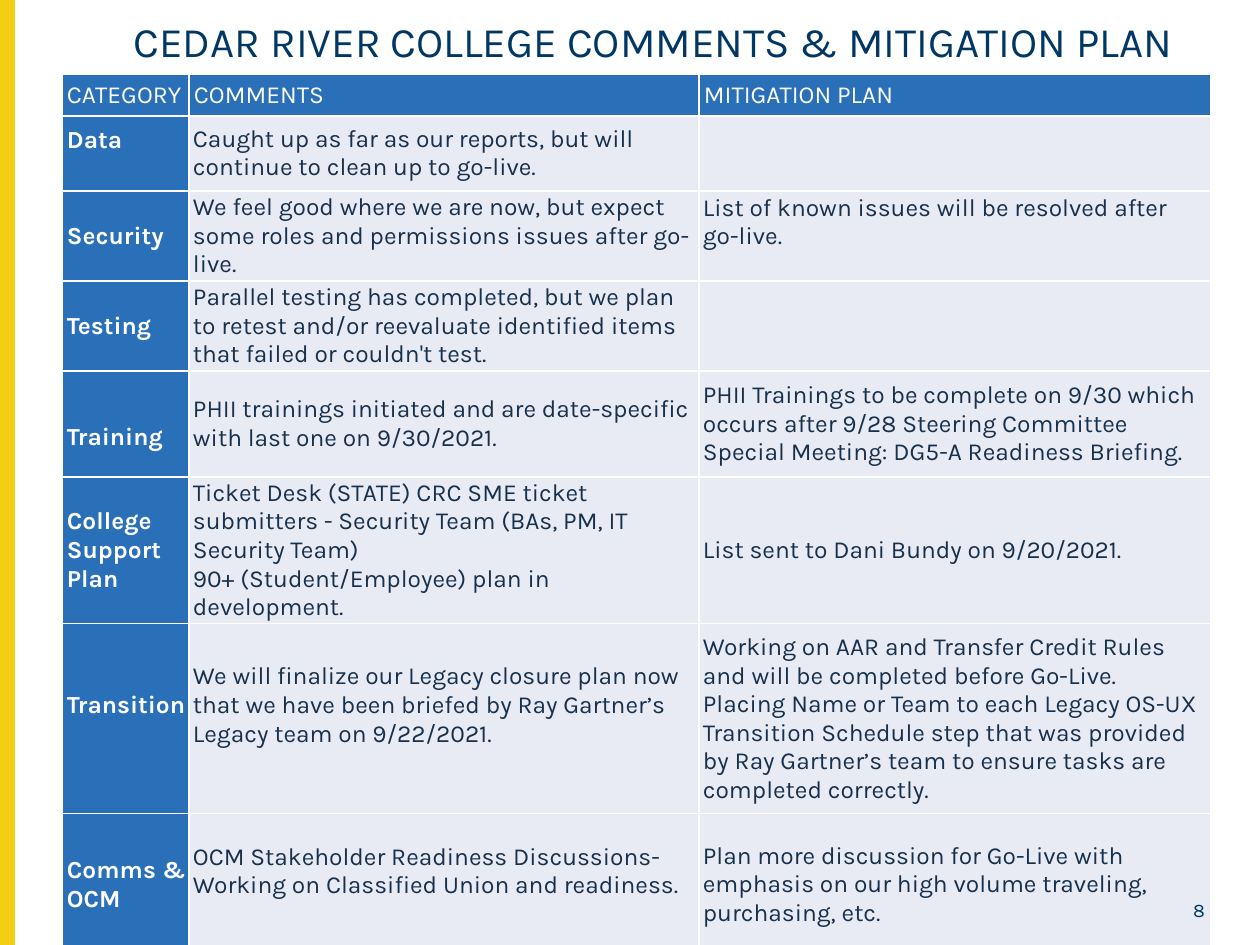
from pptx import Presentation
from pptx.dml.color import RGBColor
from pptx.enum.shapes import MSO_SHAPE
from pptx.enum.text import MSO_ANCHOR, PP_ALIGN
from pptx.util import Pt

PX = 914400 // 126
WHITE, NAVY, INK = "FFFFFF", "003764", "17304C"
BLUE, PALE, YELLOW = "2A70B8", "E8EBF3", "F4CE12"


def color(value):
    return RGBColor.from_string(value)


def format_text(text_frame, size, text_color, bold=False, **paragraph_format):
    text_frame.word_wrap = True
    text_frame.vertical_anchor = MSO_ANCHOR.MIDDLE
    for paragraph in text_frame.paragraphs:
        for name, value in paragraph_format.items():
            setattr(paragraph, name, value)
        for run in paragraph.runs:
            font = run.font
            font.name, font.size, font.bold = "Karla", Pt(size), bold
            font.color.rgb = color(text_color)


presentation = Presentation()
presentation.slide_width, presentation.slide_height = 1260 * PX, 945 * PX
slide = presentation.slides.add_slide(presentation.slide_layouts[5])

# Side bar
bar = slide.shapes.add_shape(MSO_SHAPE.RECTANGLE, 0, 0, 14 * PX, 945 * PX)
bar.shadow.inherit = False
bar.fill.solid()
bar.fill.fore_color.rgb = bar.line.color.rgb = color(YELLOW)
bar.line.width = Pt(1)

# Title
title = slide.shapes.title
title.left, title.top, title.width, title.height = 62 * PX, 14 * PX, 1182 * PX, 60 * PX
title.text_frame.text = "CEDAR RIVER COLLEGE COMMENTS & MITIGATION PLAN"
format_text(title.text_frame, 24, NAVY, alignment=PP_ALIGN.CENTER, line_spacing=0.9)

# Comments table
rows = [
    ("CATEGORY", "COMMENTS", "MITIGATION PLAN"),
    ("Data", "Caught up as far as our reports, but will continue to clean up to go-live.", ""),
    ("Security",
     "We feel good where we are now, but expect some roles and permissions issues after go-live.",
     "List of known issues will be resolved after go-live."),
    ("Testing",
     "Parallel testing has completed, but we plan to retest and/or reevaluate identified items "
     "that failed or couldn't test.", ""),
    ("Training",
     "PHII trainings initiated and are date-specific with last one on 9/30/2021.",
     "PHII Trainings to be complete on 9/30 which occurs after 9/28 Steering Committee "
     "Special Meeting: DG5-A Readiness Briefing."),
    ("College Support Plan",
     "Ticket Desk (STATE) CRC SME ticket submitters - Security Team (BAs, PM, IT Security Team)\n"
     "90+ (Student/Employee) plan in development.",
     "List sent to Dani Bundy on 9/20/2021."),
    ("Transition",
     "We will finalize our Legacy closure plan now that we have been briefed by "
     "Ray Gartner’s Legacy team on 9/22/2021.",
     "Working on AAR and Transfer Credit Rules and will be completed before Go-Live.\n"
     "Placing Name or Team to each Legacy OS-UX Transition Schedule step that was provided "
     "by Ray Gartner’s team to ensure tasks are completed correctly."),
    ("Comms & OCM",
     "OCM Stakeholder Readiness Discussions- Working on Classified Union and readiness.",
     "Plan more discussion for Go-Live with emphasis on our high volume traveling, "
     "purchasing, etc."),
]
column_widths = [127, 510, 512]
row_heights = [42, 75, 90, 90, 106, 100, 190, 142]
# One line of extra margin lifts or lowers the text in these (row, column) cells
LINE = 27
raised = {(1, 0), (2, 2), (6, 0), (6, 1), (7, 1)}
lowered = {(4, 0)}

table = slide.shapes.add_table(
    len(rows), len(column_widths), 62 * PX, 74 * PX,
    sum(column_widths) * PX, sum(row_heights) * PX).table
table.horz_banding = False
for column, width in zip(table.columns, column_widths):
    column.width = width * PX
for table_row, height in zip(table.rows, row_heights):
    table_row.height = height * PX

for row, texts in enumerate(rows):
    for column, text in enumerate(texts):
        cell = table.cell(row, column)
        is_label = row == 0 or column == 0
        left, right, edge = (5, 1, 0) if is_label else (4, 4, 2)
        margins = {
            "margin_left": left,
            "margin_right": right,
            "margin_top": edge + LINE * ((row, column) in lowered),
            "margin_bottom": edge + LINE * ((row, column) in raised),
        }
        for name, value in margins.items():
            setattr(cell, name, value * PX)
        cell.fill.solid()
        cell.fill.fore_color.rgb = color(BLUE if is_label else PALE)
        cell.vertical_anchor = MSO_ANCHOR.MIDDLE
        cell.text = text
        format_text(cell.text_frame, 14, WHITE if is_label else INK,
                    bold=row > 0 and column == 0)

# Page number
page_number = slide.shapes.add_textbox(1158 * PX, 893 * PX, 64 * PX, 33 * PX)
page_number.text_frame.text = "8"
page_number.text_frame.margin_right = 17 * PX
format_text(page_number.text_frame, 11, NAVY, alignment=PP_ALIGN.RIGHT)

presentation.save("out.pptx")
